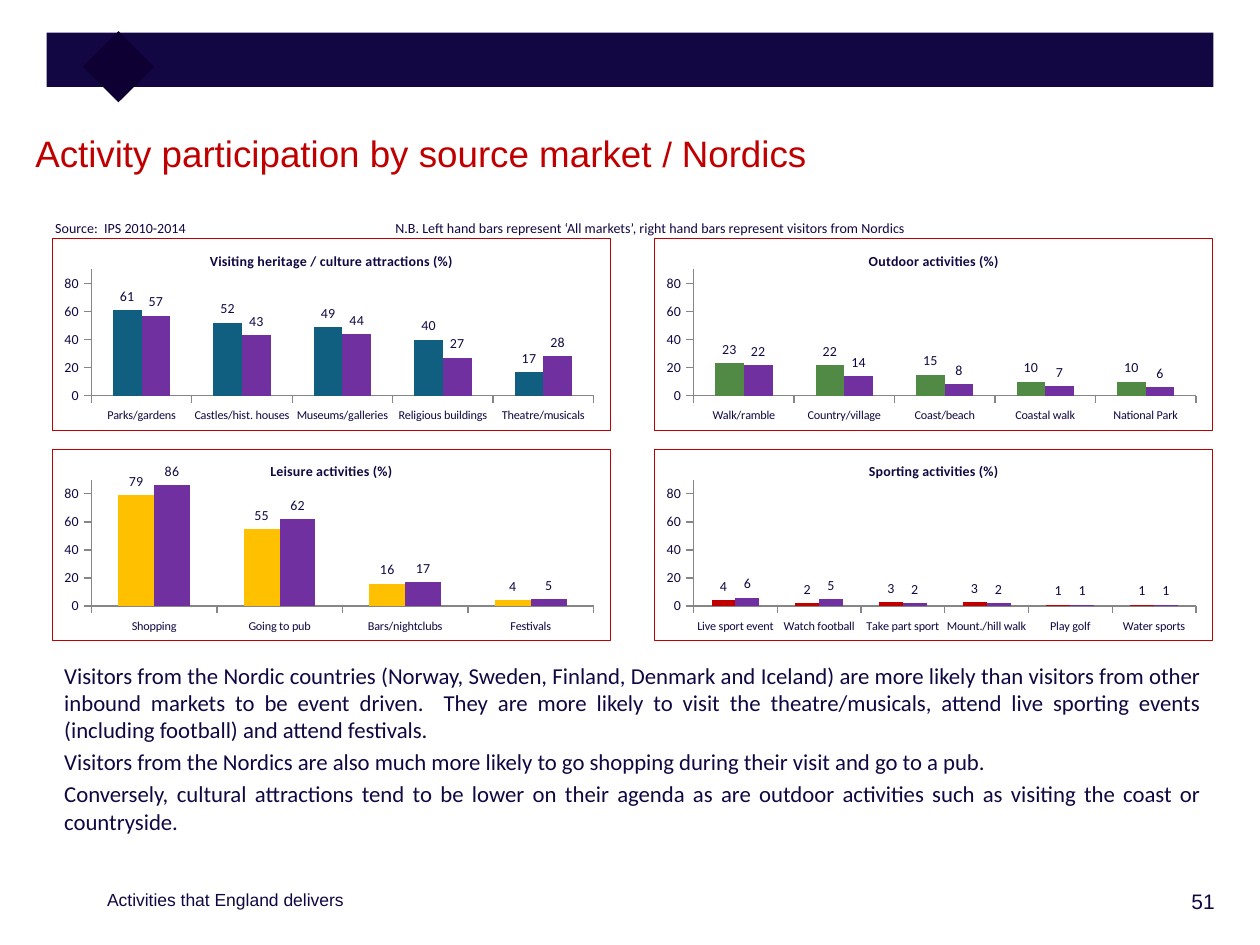
from dataclasses import dataclass

import pptx
import pptx.chart.chart
import pptx.chart.data
import pptx.dml.color
import pptx.enum.chart
import pptx.enum.shapes
import pptx.enum.text
import pptx.oxml
import pptx.oxml.ns
import pptx.slide
import pptx.text.text
import pptx.util
from pptx.util import Inches

Color = pptx.dml.color.RGBColor
Align = pptx.enum.text.PP_ALIGN
Anchor = pptx.enum.text.MSO_ANCHOR


@dataclass(frozen=True)
class Theme:
    navy: str = "120742"
    diamond: str = "0E0033"
    red: str = "C00000"
    purple: str = "7030A0"
    axis: str = "868686"
    heading_font: str = "Arial"
    body_font: str = "Calibri"
    title_size: int = 21
    slash_size: int = 20
    body_size: int = 13
    number_size: int = 12
    footer_size: int = 10
    small_size: int = 8
    category_size: int = 7


@dataclass(frozen=True)
class Box:
    left: float
    top: float
    width: float
    height: float

    def lengths(self) -> tuple:
        return tuple(Inches(n) for n in (self.left, self.top, self.width, self.height))


@dataclass(frozen=True)
class ActivityChart:
    title: str
    color: str
    categories: tuple
    all_markets: tuple
    nordics: tuple


THEME = Theme()

CHARTS = (
    ActivityChart(
        "Visiting heritage / culture attractions (%)", "105F80",
        ("Parks/gardens", "Castles/hist. houses", "Museums/galleries",
         "Religious buildings", "Theatre/musicals"),
        (61, 52, 49, 40, 17), (57, 43, 44, 27, 28)),
    ActivityChart(
        "Outdoor activities (%)", "518A45",
        ("Walk/ramble", "Country/village", "Coast/beach", "Coastal walk", "National Park"),
        (23, 22, 15, 10, 10), (22, 14, 8, 7, 6)),
    ActivityChart(
        "Leisure activities (%)", "FFC000",
        ("Shopping", "Going to pub", "Bars/nightclubs", "Festivals"),
        (79, 55, 16, 4), (86, 62, 17, 5)),
    ActivityChart(
        "Sporting activities (%)", THEME.red,
        ("Live sport event", "Watch football", "Take part sport",
         "Mount./hill walk", "Play golf", "Water sports"),
        (4, 2, 3, 3, 1, 1), (6, 5, 2, 2, 1, 1)),
)

COMMENTARY = (
    "Visitors from the Nordic countries (Norway, Sweden, Finland, Denmark and Iceland) are "
    "more likely than visitors from other inbound markets to be event driven.  They are more "
    "likely to visit the theatre/musicals, attend live sporting events (including football) "
    "and attend festivals.",
    "Visitors from the Nordics are also much more likely to go shopping during their visit "
    "and go to a pub.",
    "Conversely, cultural attractions tend to be lower on their agenda as are outdoor "
    "activities such as visiting the coast or countryside.",
)


def style_font(font: pptx.text.text.Font, size: int, name: str, color: str = THEME.navy) -> None:
    font.size = pptx.util.Pt(size)
    font.name = name
    font.color.rgb = Color.from_string(color)


def place(shape, box: Box, anchor=Anchor.TOP) -> pptx.text.text.TextFrame:
    shape.left, shape.top, shape.width, shape.height = box.lengths()
    frame = shape.text_frame
    frame.word_wrap = True
    frame.auto_size = pptx.enum.text.MSO_AUTO_SIZE.NONE
    frame.vertical_anchor = anchor
    return frame


def write(frame: pptx.text.text.TextFrame, lines: tuple, size: int, font_name: str,
          alignment=Align.LEFT) -> None:
    for index, line in enumerate(lines):
        paragraph = frame.add_paragraph() if index else frame.paragraphs[0]
        paragraph.text = line
        properties = paragraph._p.get_or_add_pPr()
        properties.set("marL", "0")
        properties.set("indent", "0")
        properties.append(pptx.oxml.parse_xml(
            f'<a:buNone {pptx.oxml.ns.nsdecls("a")}/>'))
        paragraph.alignment = alignment
        paragraph.space_before = pptx.util.Pt(0.2 * size if index else 0)
        style_font(paragraph.font, size, font_name)


def add_text(slide: pptx.slide.Slide, box: Box, text: str, size: int, font_name: str,
             alignment=Align.LEFT) -> None:
    frame = place(slide.shapes.add_textbox(*box.lengths()), box)
    write(frame, (text,), size, font_name, alignment)


def add_block(slide: pptx.slide.Slide, box: Box, color: str, rotation: int = 0) -> None:
    shape = slide.shapes.add_shape(
        pptx.enum.shapes.MSO_SHAPE.RECTANGLE, *box.lengths())
    shape.shadow.inherit = False
    shape.fill.solid()
    shape.fill.fore_color.rgb = Color.from_string(color)
    shape.line.fill.background()
    shape.rotation = rotation


def frame_chart(chart: pptx.chart.chart.Chart) -> None:
    names = pptx.oxml.ns.nsdecls("c", "a")
    border = pptx.oxml.parse_xml(
        f'<c:spPr {names}><a:noFill/><a:ln w="9525"><a:solidFill>'
        f'<a:srgbClr val="{THEME.red}"/></a:solidFill></a:ln></c:spPr>')
    chart._chartSpace.chart.addnext(border)
    layout = pptx.oxml.parse_xml(
        f'<c:layout {names}><c:manualLayout><c:layoutTarget val="inner"/>'
        '<c:xMode val="edge"/><c:yMode val="edge"/><c:x val="0.07"/><c:y val="0.16"/>'
        '<c:w val="0.9"/><c:h val="0.66"/></c:manualLayout></c:layout>')
    plot_area = chart._chartSpace.chart.plotArea
    for existing in plot_area.findall(pptx.oxml.ns.qn("c:layout")):
        plot_area.remove(existing)
    plot_area.insert(0, layout)


def add_activity_chart(slide: pptx.slide.Slide, box: Box, activity: ActivityChart) -> None:
    data = pptx.chart.data.CategoryChartData(number_format="0")
    data.categories = activity.categories
    data.add_series("Series 1", activity.all_markets)
    data.add_series("Series 2", activity.nordics)
    chart = slide.shapes.add_chart(
        pptx.enum.chart.XL_CHART_TYPE.COLUMN_CLUSTERED, *box.lengths(), data).chart
    style_font(chart.font, THEME.number_size, THEME.body_font)
    chart.has_legend = False
    chart.has_title = True
    chart.chart_title.include_in_layout = True
    title = chart.chart_title.text_frame.paragraphs[0]
    title.text = activity.title
    style_font(title.font, THEME.small_size, THEME.body_font)
    title.font.bold = True

    plot = chart.plots[0]
    plot.gap_width = 150
    plot.overlap = 0
    plot.vary_by_categories = False
    for series, color in zip(plot.series, (activity.color, THEME.purple)):
        series.format.fill.solid()
        series.format.fill.fore_color.rgb = Color.from_string(color)
        labels = series.data_labels
        labels.show_value = True
        labels.number_format = "0"
        labels.number_format_is_linked = False
        labels.position = pptx.enum.chart.XL_LABEL_POSITION.OUTSIDE_END
        style_font(labels.font, THEME.small_size, THEME.body_font)

    for axis, size in ((chart.category_axis, THEME.category_size),
                       (chart.value_axis, THEME.small_size)):
        axis.has_major_gridlines = False
        axis.major_tick_mark = pptx.enum.chart.XL_TICK_MARK.OUTSIDE
        axis.minor_tick_mark = pptx.enum.chart.XL_TICK_MARK.NONE
        axis.format.line.color.rgb = Color.from_string(THEME.axis)
        style_font(axis.tick_labels.font, size, THEME.body_font)
    value_axis = chart.value_axis
    value_axis.minimum_scale, value_axis.maximum_scale = 0, 90
    value_axis.major_unit = 20
    value_axis.tick_labels.number_format = "0"
    value_axis.tick_labels.number_format_is_linked = False
    frame_chart(chart)


def add_title(slide: pptx.slide.Slide) -> None:
    frame = place(slide.shapes.title, Box(0.18, 0.95, 9.64, 0.61))
    frame.margin_top = Inches(0.09)
    paragraph = frame.paragraphs[0]
    paragraph.alignment = Align.LEFT
    style_font(paragraph.font, THEME.title_size, THEME.heading_font, THEME.red)
    for text, size in (("Activity participation by source market ", THEME.title_size),
                       ("/ ", THEME.slash_size), ("Nordics", THEME.title_size)):
        run = paragraph.add_run()
        run.text = text
        run.font.size = pptx.util.Pt(size)


def main() -> None:
    presentation = pptx.Presentation()
    presentation.slide_width, presentation.slide_height = Inches(10), Inches(7.5)
    slide = presentation.slides.add_slide(
        presentation.slide_layouts.get_by_name("Two Content"))
    add_block(slide, Box(0.37, 0.26, 9.26, 0.43), THEME.navy)
    add_block(slide, Box(0.74, 0.33, 0.4, 0.4), THEME.diamond, 45)
    add_title(slide)
    commentary = place(slide.placeholders[1], Box(0.41, 5.2, 9.21, 1.8))
    write(commentary, COMMENTARY, THEME.body_size, THEME.body_font, Align.JUSTIFY)
    footer = place(slide.placeholders[2], Box(0.75, 6.99, 2.67, 0.3), Anchor.MIDDLE)
    write(footer, ("Activities that England delivers",), THEME.footer_size, THEME.heading_font)
    add_text(slide, Box(8.53, 7, 1.21, 0.36), "51", THEME.number_size,
             THEME.heading_font, Align.RIGHT)
    add_text(slide, Box(0.34, 1.69, 1.44, 0.18), "Source:  IPS 2010-2014",
             THEME.small_size, THEME.body_font)
    for index, activity in enumerate(CHARTS):
        row, column = divmod(index, 2)
        box = Box(0.41 + 4.78 * column, 1.89 + 1.67 * row, 4.44, 1.53)
        add_activity_chart(slide, box, activity)
    add_text(slide, Box(3.04, 1.69, 4.7, 0.27),
             "N.B. Left hand bars represent ‘All markets’, right hand bars represent "
             "visitors from Nordics", THEME.small_size, THEME.body_font)
    presentation.save("out.pptx")


if __name__ == "__main__":
    main()
